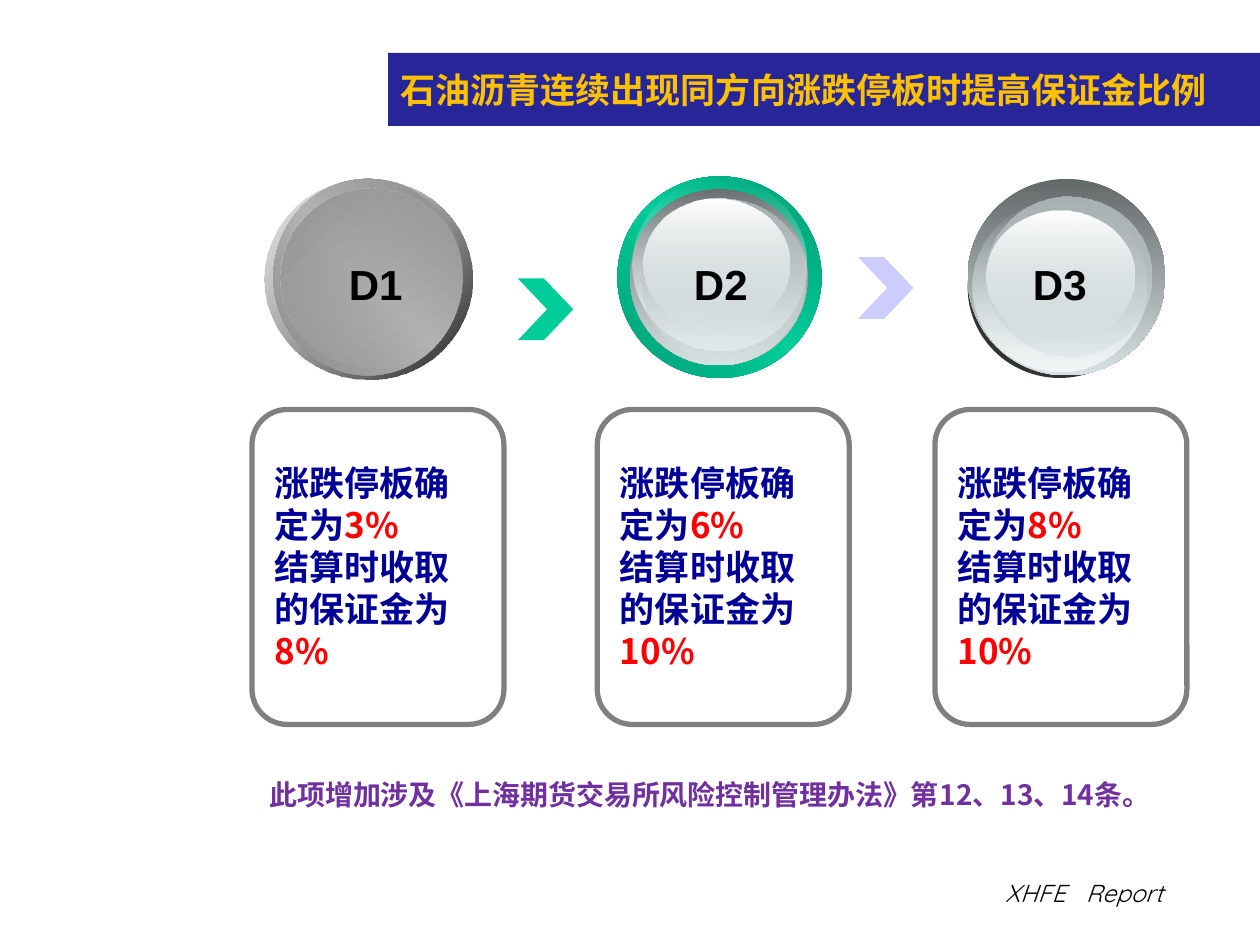
"""Build the slide on margin ratios for consecutive price limit days."""
from lxml import etree
from pptx import Presentation
from pptx.dml.color import RGBColor
from pptx.enum.shapes import MSO_SHAPE
from pptx.enum.text import MSO_ANCHOR, PP_ALIGN
from pptx.oxml.ns import qn
from pptx.util import Pt

PX = 9144
RECT, OVAL = MSO_SHAPE.RECTANGLE, MSO_SHAPE.OVAL
CARD, CHEVRON = MSO_SHAPE.ROUNDED_RECTANGLE, MSO_SHAPE.CHEVRON
MIDDLE, LEFT = MSO_ANCHOR.MIDDLE, PP_ALIGN.LEFT
CJK = "Noto Sans CJK SC"
BLACK = RGBColor(0x00, 0x00, 0x00)
NAVY = RGBColor(0x26, 0x26, 0x99)
GOLD = RGBColor(0xFF, 0xC0, 0x00)
BLUE = RGBColor(0x00, 0x00, 0x99)
RED = RGBColor(0xFF, 0x00, 0x00)
GRAY = RGBColor(0x80, 0x80, 0x80)
CHARCOAL = RGBColor(0x33, 0x33, 0x33)
GREEN = RGBColor(0x00, 0xCC, 0x99)
DARK_GREEN = RGBColor(0x00, 0x9C, 0x75)
LAVENDER = RGBColor(0xCC, 0xCC, 0xFF)
PURPLE = RGBColor(0x70, 0x30, 0xA0)
SILVER = RGBColor(0xB2, 0xB2, 0xB2)
MID_GRAY = RGBColor(0x88, 0x88, 0x88)
FACE_GRAY = RGBColor(0x92, 0x92, 0x92)
SLATE = RGBColor(0x63, 0x68, 0x69)
STEEL = RGBColor(0xAA, 0xB2, 0xB3)
MIST = RGBColor(0xD6, 0xE1, 0xE2)
PALE = RGBColor(0xF1, 0xF5, 0xF5)
WHITE = RGBColor(0xFF, 0xFF, 0xFF)

RIM = (90, (0, SLATE, 100), (100, MIST, 100))
GLOW = (90, (0, MIST, 0), (100, PALE, 100))
BOWL = (90, (0, STEEL, 100), (100, MIST, 48))
SHINE = (90, (0, WHITE, 100), (100, MIST, 38))

prs = Presentation()
prs.slide_width, prs.slide_height = 1000 * PX, 750 * PX
s = prs.slides.add_slide(prs.slide_layouts[6])


def add_shape(kind, box, fill=None):
    sp = s.shapes.add_shape(kind, *(v * PX for v in box))
    sp.shadow.inherit = False
    sp.line.fill.background()
    if fill is None:
        sp.fill.background()
    elif isinstance(fill, RGBColor):
        sp.fill.solid()
        sp.fill.fore_color.rgb = fill
    else:
        angle, *stops = fill
        sp.fill.gradient()
        grad = sp._element.spPr.find(qn("a:gradFill"))
        stop_list = grad.find(qn("a:gsLst"))
        for old in list(stop_list):
            stop_list.remove(old)
        for pos, color, alpha in stops:
            gs = etree.SubElement(stop_list, qn("a:gs"), pos=str(pos * 1000))
            clr = etree.SubElement(gs, qn("a:srgbClr"), val=str(color))
            if alpha < 100:
                etree.SubElement(clr, qn("a:alpha"), val=str(alpha * 1000))
        grad.find(qn("a:lin")).set("ang", str(angle * 60000))
    return sp


def set_font(p, name, size, color=None, bold=True):
    p.alignment = LEFT
    p.font.name, p.font.size, p.font.bold = name, Pt(size), bold
    if color is not None:
        p.font.color.rgb = color
    etree.SubElement(p._p.pPr.find(qn("a:defRPr")), qn("a:ea"), typeface=CJK)


tf = s.shapes.add_textbox(788 * PX, 692 * PX, 200 * PX, 33 * PX).text_frame
tf.word_wrap = True
p = tf.paragraphs[0]
p.add_run().text = "XHFE\tReport"
tabs = etree.SubElement(p._p.get_or_add_pPr(), qn("a:tabLst"))
etree.SubElement(tabs, qn("a:tab"), pos=str(64 * PX), algn="l")
set_font(p, "Quicksand", 14, BLACK, bold=False)
p.font.italic = True

tf = add_shape(RECT, (308, 42, 692, 58), NAVY).text_frame
tf.vertical_anchor = MIDDLE
p = tf.paragraphs[0]
r = p.add_run()
r.text = "石油沥青连续出现同方向涨跌停板时提高保证金比例"
set_font(p, "Times New Roman", 20)
r.font.color.rgb = GOLD

discs = [
    ((210, 142, 165, 159), (45, (0, SILVER, 32), (100, BLACK, 90))),
    ((217, 142, 150, 156),
     (315, (0, MID_GRAY, 100), (50, SILVER, 100), (100, MID_GRAY, 100))),
    ((223, 150, 144, 141), (45, (0, FACE_GRAY, 100), (100, SILVER, 0))),
    ((490, 140, 162, 160),
     (315, (0, DARK_GREEN, 100), (50, GREEN, 100), (100, DARK_GREEN, 100))),
    ((500, 150, 141, 140), RIM),
    ((502, 142, 138, 136), GLOW),
    ((508, 158, 131, 127), BOWL),
    ((511, 158, 116, 103), SHINE),
    ((768, 156, 146, 144), CHARCOAL),
    ((768, 142, 157, 156), RIM),
    ((772, 159, 138, 136), GLOW),
    ((783, 156, 131, 127), BOWL),
    ((783, 167, 117, 103), SHINE),
]
for box, fill in discs:
    add_shape(OVAL, box, fill)

for x, y, color in [(411, 221, GREEN), (681, 204, LAVENDER)]:
    add_shape(CHEVRON, (x, y, 44, 49), color).adjustments[0] = 0.53

days = [
    ("D1", 267, 200, "3%", "8%"),
    ("D2", 541, 474, "6%", "10%"),
    ("D3", 810, 742, "8%", "10%"),
]
for day, label_x, card_x, limit, margin in days:
    tf = s.shapes.add_textbox(label_x * PX, 200 * PX, 63 * PX, 50 * PX).text_frame
    tf.word_wrap = False
    p = tf.paragraphs[0]
    p.add_run().text = day
    set_font(p, "Arial", 24, BLACK)

    sp = add_shape(CARD, (card_x, 325, 200, 250))
    sp.adjustments[0] = 0.14
    sp.line.color.rgb, sp.line.width = GRAY, Pt(3)
    tf = sp.text_frame
    tf.word_wrap, tf.vertical_anchor = True, MIDDLE
    lines = [("涨跌停板确定为", limit), ("结算时收取的保证金为", margin)]
    for i, (label, value) in enumerate(lines):
        p = tf.add_paragraph() if i else tf.paragraphs[0]
        for text, color in [(label, BLUE), (value, RED)]:
            r = p.add_run()
            r.text = text
            r.font.color.rgb = color
        p.line_spacing = Pt(24)
        set_font(p, CJK, 20)

tf = s.shapes.add_textbox(196 * PX, 600 * PX, 729 * PX, 51 * PX).text_frame
tf.word_wrap = True
tf.margin_top = 15 * PX
p = tf.paragraphs[0]
p.add_run().text = "此项增加涉及《上海期货交易所风险控制管理办法》第12、13、14条。"
p._p.get_or_add_pPr().set("indent", str(8 * PX))
p.line_spacing = Pt(20.5)
set_font(p, CJK, 16, PURPLE)

prs.save("out.pptx")
